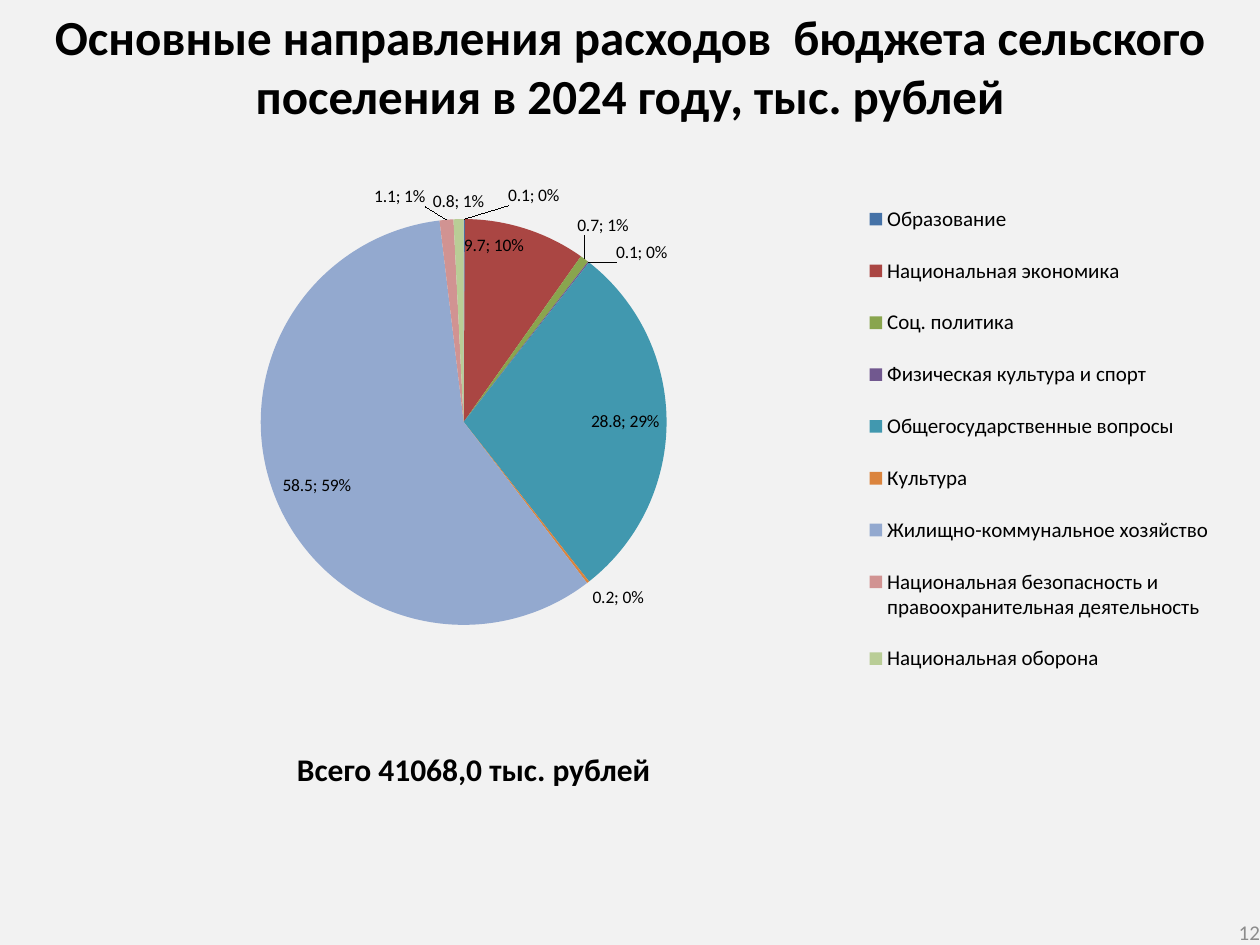
import pptx
import pptx.chart.data
import pptx.dml.color
import pptx.enum.chart
import pptx.enum.text
import pptx.oxml
import pptx.oxml.ns
import pptx.util
from pptx.util import Inches

FONT = "Calibri"
COLORS = {"background": "F2F2F2", "text": "000000", "page": "8C8C8C"}
TITLE = "Основные направления расходов  бюджета сельского поселения в 2024 году, тыс. рублей"
TOTAL = "Всего 41068,0 тыс. рублей"
PAGE = "12"

# name, value, colour, label position, label shift as a share of the chart
EXPENSES = [
    ("Образование", 0.1, "4572A7", "OUTSIDE_END", (0.06, -0.01)),
    ("Национальная экономика", 9.7, "AA4643", "INSIDE_END", None),
    ("Соц. политика", 0.7, "89A54E", "OUTSIDE_END", (-0.01, -0.03)),
    ("Физическая культура и спорт", 0.1, "71588F", "OUTSIDE_END", (0.02, 0.01)),
    ("Общегосударственные вопросы", 28.8, "4198AF", "INSIDE_END", None),
    ("Культура", 0.2, "DB843D", "OUTSIDE_END", None),
    ("Жилищно-коммунальное хозяйство", 58.5, "93A9CF", "INSIDE_END", None),
    ("Национальная безопасность и правоохранительная деятельность", 1.1, "D19392",
     "OUTSIDE_END", (-0.04, -0.01)),
    ("Национальная оборона", 0.8, "B9CD96", "OUTSIDE_END", None),
]


def rgb(value):
    return pptx.dml.color.RGBColor.from_string(value)


def set_font(font, size, color=COLORS["text"], bold=False):
    font.name, font.size, font.bold = FONT, pptx.util.Pt(size), bold
    font.color.rgb = rgb(color)


def write(shape, text, size, align, color=COLORS["text"], bold=False):
    frame = shape.text_frame
    frame.text = text
    frame.word_wrap = True
    frame.auto_size = pptx.enum.text.MSO_AUTO_SIZE.NONE
    frame.vertical_anchor = pptx.enum.text.MSO_ANCHOR.TOP
    paragraph = frame.paragraphs[0]
    paragraph.alignment = align
    set_font(paragraph.runs[0].font, size, color, bold)
    return frame


def manual_layout(**settings):
    """Return a c:layout element with its settings in schema order."""
    children = "".join(f'<c:{tag} val="{value}"/>' for tag, value in settings.items())
    return pptx.oxml.parse_xml(
        f'<c:layout {pptx.oxml.ns.nsdecls("c")}><c:manualLayout>{children}'
        "</c:manualLayout></c:layout>")


def place_plot(chart):
    area = chart.plots[0]._element.getparent()
    for old in area.findall(pptx.oxml.ns.qn("c:layout")):
        area.remove(old)
    area.insert(0, manual_layout(layoutTarget="inner", xMode="edge", yMode="edge",
                                 x=0.001, y=0.116, w=0.672, h=0.681))


def place_legend(chart):
    chart.has_legend = True
    legend = chart.legend
    legend.position = pptx.enum.chart.XL_LEGEND_POSITION.RIGHT
    legend.include_in_layout = False
    set_font(legend.font, 12)
    element = legend._element
    for old in element.findall(pptx.oxml.ns.qn("c:layout")):
        element.remove(old)
    element.find(pptx.oxml.ns.qn("c:legendPos")).addnext(
        manual_layout(xMode="edge", yMode="edge", x=0.675, y=0.05, w=0.32, h=0.87))


def label_slice(point, position, shift):
    """Show value and percentage, moved by shift from the standard position."""
    label = point.data_label
    set_font(label.font, 10)
    label.position = pptx.enum.chart.XL_LABEL_POSITION[position]
    element = label._get_or_add_dLbl()
    element.find(pptx.oxml.ns.qn("c:showPercent")).set("val", "1")
    separator = pptx.oxml.parse_xml(
        f'<c:separator {pptx.oxml.ns.nsdecls("c")}>; </c:separator>')
    element.find(pptx.oxml.ns.qn("c:showBubbleSize")).addnext(separator)
    if shift:
        element.find(pptx.oxml.ns.qn("c:idx")).addnext(
            manual_layout(x=shift[0], y=shift[1]))


def add_expense_chart(slide):
    data = pptx.chart.data.CategoryChartData(number_format="0.0")
    data.categories = [expense[0] for expense in EXPENSES]
    data.add_series("Series 1", [expense[1] for expense in EXPENSES])
    chart = slide.shapes.add_chart(
        pptx.enum.chart.XL_CHART_TYPE.PIE, Inches(0.59), Inches(1.19),
        Inches(9.17), Inches(4.73), data).chart
    chart.has_title = False
    set_font(chart.font, 10)
    place_plot(chart)
    place_legend(chart)
    chart.plots[0].vary_by_categories = True
    expenses = chart.plots[0].series[0]
    expenses.data_labels.show_value = True
    expenses.data_labels.show_percentage = True
    for index, (_, _, color, position, shift) in enumerate(EXPENSES):
        point = expenses.points[index]
        point.format.fill.solid()
        point.format.fill.fore_color.rgb = rgb(color)
        label_slice(point, position, shift)


def main():
    deck = pptx.Presentation()
    deck.slide_width, deck.slide_height = Inches(10), Inches(7.5)
    slide = deck.slides.add_slide(deck.slide_layouts[5])
    slide.background.fill.solid()
    slide.background.fill.fore_color.rgb = rgb(COLORS["background"])
    align = pptx.enum.text.PP_ALIGN

    title = slide.shapes.title
    title.left, title.top = Inches(0), Inches(0)
    title.width, title.height = Inches(10), Inches(0.69)
    write(title, TITLE, 28, align.CENTER, bold=True)

    add_expense_chart(slide)

    total = slide.shapes.add_textbox(Inches(1.85), Inches(5.9), Inches(3.82), Inches(0.4))
    write(total, TOTAL, 18, align.CENTER, bold=True)

    page = slide.shapes.add_textbox(Inches(7.67), Inches(7.29), Inches(2.33), Inches(0.21))
    frame = write(page, PAGE, 12, align.RIGHT, COLORS["page"])
    frame.vertical_anchor = pptx.enum.text.MSO_ANCHOR.MIDDLE
    frame.margin_left = frame.margin_right = frame.margin_top = frame.margin_bottom = 0

    deck.save("out.pptx")


if __name__ == "__main__":
    main()
